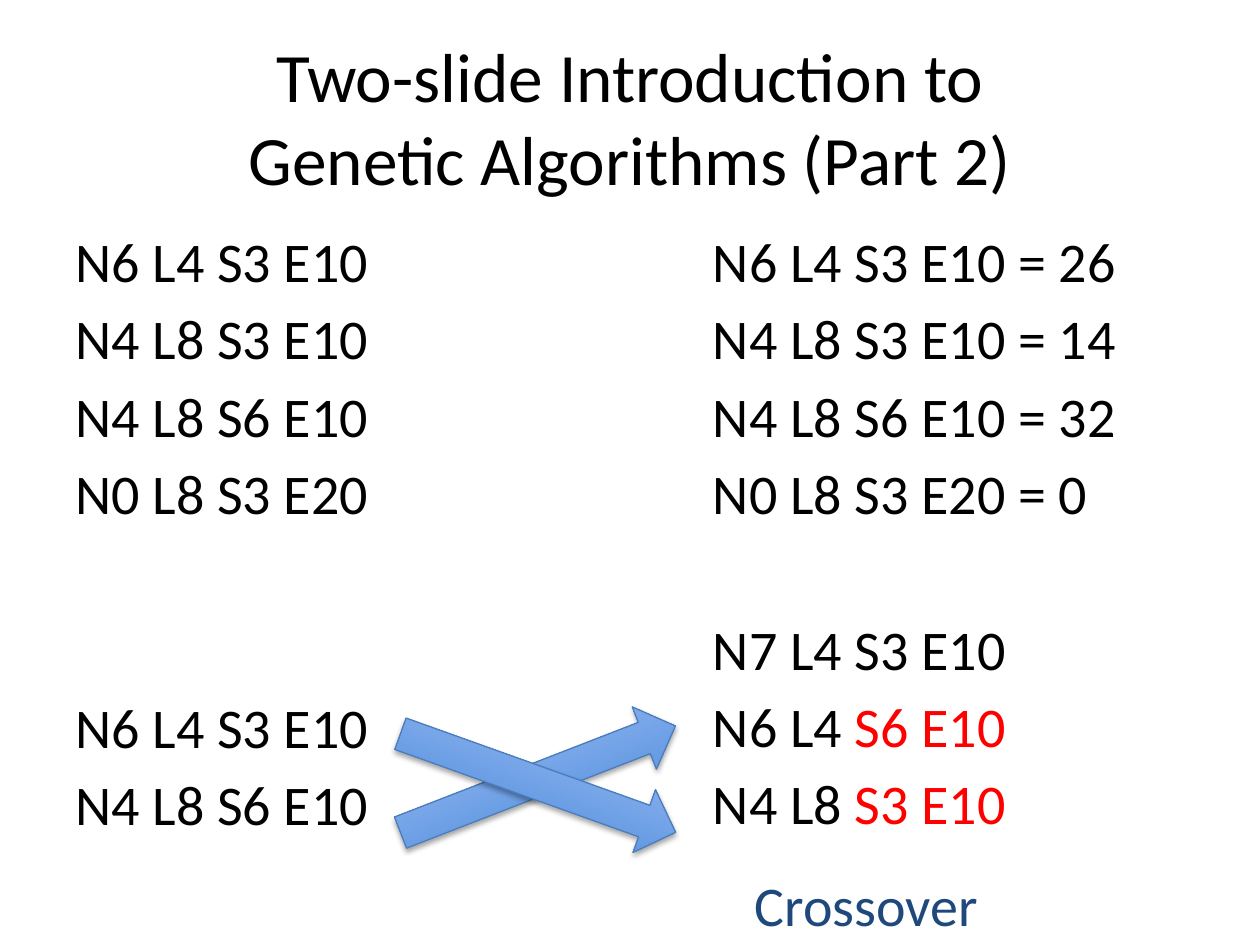
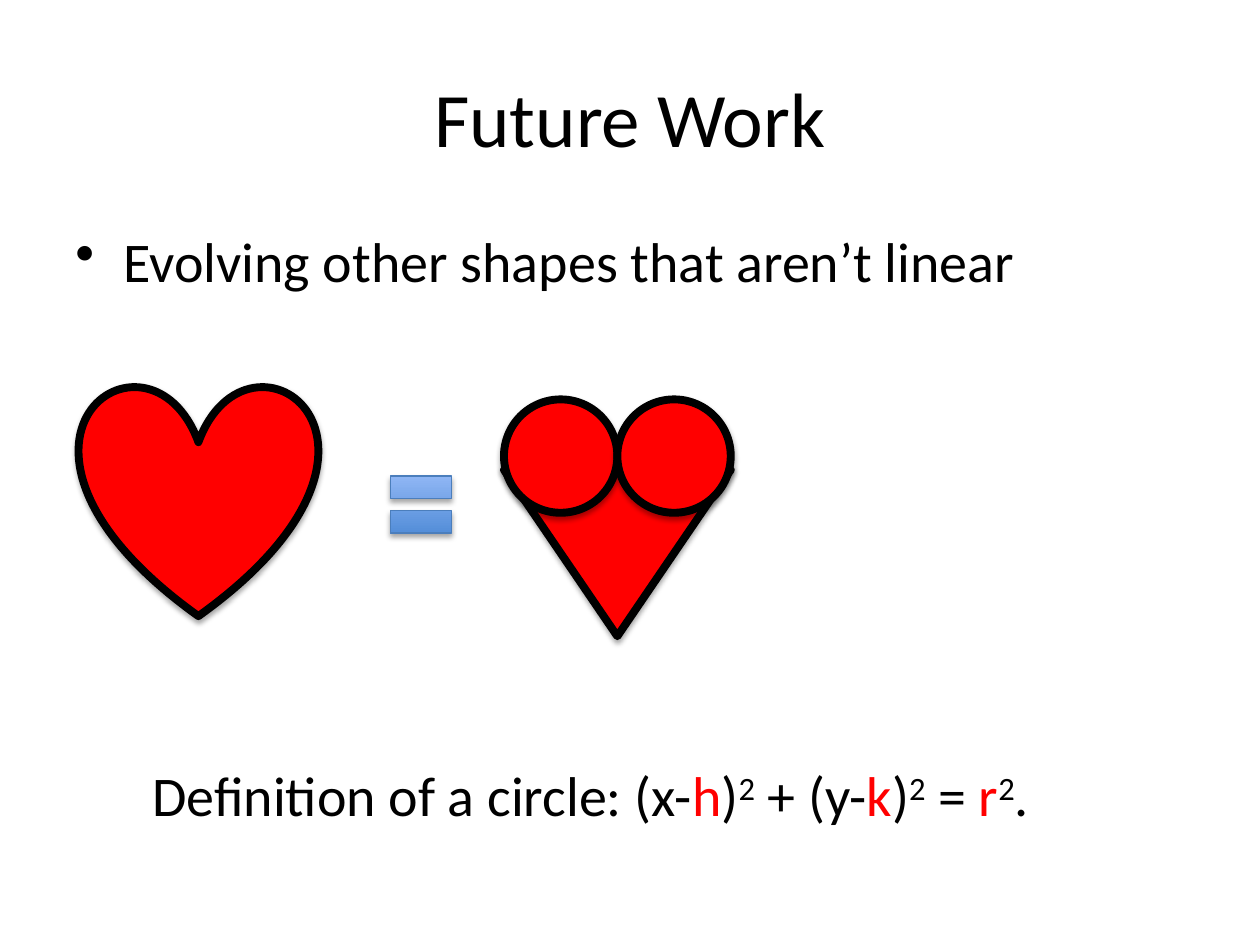
from lxml.etree import SubElement
from pptx import Presentation
from pptx.dml.color import RGBColor
from pptx.enum.shapes import MSO_SHAPE as Shape
from pptx.enum.text import MSO_ANCHOR, MSO_AUTO_SIZE, PP_ALIGN
from pptx.oxml.ns import qn
from pptx.util import Inches, Pt

BLACK = RGBColor(0x00, 0x00, 0x00)
RED = RGBColor(0xFF, 0x00, 0x00)
NAVY = RGBColor(0x1F, 0x49, 0x7D)
BLUE_DARK = RGBColor(0x3F, 0x80, 0xCE)
BLUE_LIGHT = RGBColor(0xA4, 0xC4, 0xFF)
BLUE_LINE = RGBColor(0x4B, 0x7E, 0xBC)

FONT = "Calibri"
BODY_SIZE = 32
ROW_GAP = 5.76
ROW_PITCH = 44.8
TITLE_ONLY = 5


class Deck:
    """Holds the presentation, its style and the slide being filled."""

    def __init__(self):
        self.prs = Presentation()
        self.prs.slide_width, self.prs.slide_height = Inches(10), Inches(7.5)
        self.slide = None

    def add_slide(self, title, size):
        self.slide = self.prs.slides.add_slide(self.prs.slide_layouts[TITLE_ONLY])
        heading = self.slide.shapes.title
        heading.left, heading.top = Inches(0.5), Inches(0.3)
        heading.width, heading.height = Inches(9), Inches(1.25)
        frame = heading.text_frame
        frame.vertical_anchor = MSO_ANCHOR.MIDDLE
        frame.text = title
        frame.paragraphs[0].alignment = PP_ALIGN.CENTER
        self.set_font(frame.paragraphs[0], size, BLACK)

    def set_font(self, paragraph, size, color=None):
        paragraph.font.name = FONT
        paragraph.font.size = Pt(size)
        if color is not None:
            paragraph.font.color.rgb = color

    def text_frame(self, left, top, width, height, wrap=True):
        box = self.slide.shapes.add_textbox(
            Inches(left), Inches(top), Inches(width), Inches(height))
        frame = box.text_frame
        frame.word_wrap = wrap
        if not wrap:
            frame.auto_size = MSO_AUTO_SIZE.SHAPE_TO_FIT_TEXT
        return frame

    def label(self, left, top, width, height, text, color=BLACK, wrap=True):
        paragraph = self.text_frame(left, top, width, height, wrap).paragraphs[0]
        paragraph.text = text
        self.set_font(paragraph, BODY_SIZE, color)
        return paragraph

    def bullet(self, left, top, width, height, text):
        properties = self.label(left, top, width, height, text)._p.get_or_add_pPr()
        properties.set("marL", str(Inches(0.38)))
        properties.set("indent", str(-Inches(0.38)))
        mark = SubElement(properties, qn("a:buChar"), char="•")
        properties.find(qn("a:defRPr")).addprevious(mark)

    def mixed_runs(self, paragraph, runs):
        """Fill a paragraph from (text, colour, is superscript) triples."""
        self.set_font(paragraph, BODY_SIZE)
        for text, color, raised in runs:
            run = paragraph.add_run()
            run.text = text
            run.font.color.rgb = color
            if raised:
                run._r.get_or_add_rPr().set("baseline", "30000")

    def genome_column(self, left, width, groups, skipped_rows):
        """List groups of (kept genes, swapped genes), with free rows between groups."""
        frame = self.text_frame(left, 1.75, width, 5.49)
        paragraph = frame.paragraphs[0]
        for group_index, group in enumerate(groups):
            for row, (kept, swapped) in enumerate(group):
                if group_index or row:
                    paragraph = frame.add_paragraph()
                    skipped = 0 if row else skipped_rows
                    paragraph.space_before = Pt(ROW_GAP + skipped * ROW_PITCH)
                if swapped:
                    self.mixed_runs(paragraph, [(kept, BLACK, False), (swapped, RED, False)])
                else:
                    paragraph.text = kept
                    self.set_font(paragraph, BODY_SIZE, BLACK)

    def shape(self, kind, left, top, width, height):
        shape = self.slide.shapes.add_shape(
            kind, Inches(left), Inches(top), Inches(width), Inches(height))
        shape.shadow.inherit = False
        effects = shape._element.spPr.find(qn("a:effectLst"))
        shadow = SubElement(effects, qn("a:outerShdw"), blurRad=str(Pt(3.1)),
                            dist=str(Pt(1.8)), dir="5400000", rotWithShape="0")
        shade = SubElement(shadow, qn("a:srgbClr"), val=str(BLACK))
        SubElement(shade, qn("a:alpha"), val="35000")
        return shape

    def blue_shape(self, kind, left, top, width, height, rotation=0):
        shape = self.shape(kind, left, top, width, height)
        shape.rotation = rotation
        shape.fill.gradient()
        shape.fill.gradient_angle = 90
        for stop, color in zip(shape.fill.gradient_stops, (BLUE_DARK, BLUE_LIGHT)):
            stop.color.rgb = color
        shape.line.color.rgb = BLUE_LINE
        shape.line.width = Pt(0.75)

    def red_shape(self, kind, left, top, width, height, flipped=False):
        shape = self.shape(kind, left, top, width, height)
        shape.fill.solid()
        shape.fill.fore_color.rgb = RED
        shape.line.color.rgb = BLACK
        shape.line.width = Pt(4.5)
        if flipped:
            shape._element.spPr.find(qn("a:xfrm")).set("flipV", "1")


def add_crossover_slide(deck):
    deck.add_slide("Two-slide Introduction to\vGenetic Algorithms (Part 2)", 39.6)

    scores = {"N6 L4 S3 E10": 26, "N4 L8 S3 E10": 14,
              "N4 L8 S6 E10": 32, "N0 L8 S3 E20": 0}
    parents = [("N6 L4 S3 E10", ""), ("N4 L8 S6 E10", "")]
    children = [("N7 L4 S3 E10", ""), ("N6 L4 ", "S6 E10"), ("N4 L8 ", "S3 E10")]
    population = [(genome, "") for genome in scores]
    scored = [(f"{genome} = {score}", "") for genome, score in scores.items()]
    deck.genome_column(0.5, 2.92, [population, parents], skipped_rows=2)
    deck.genome_column(5.56, 4.1, [scored, children], skipped_rows=1)

    deck.blue_shape(Shape.RIGHT_ARROW, 3.1, 5.92, 2.34, 0.53, rotation=338.8)
    deck.blue_shape(Shape.RIGHT_ARROW, 3.11, 5.95, 2.32, 0.53, rotation=19.7)
    deck.label(5.89, 6.86, 2, 0.64, "Crossover", NAVY, wrap=False)


def add_future_work_slide(deck):
    deck.add_slide("Future Work", 44)
    deck.bullet(0.5, 1.75, 9, 0.66, "Evolving other shapes that aren’t linear")

    deck.red_shape(Shape.HEART, 0.63, 3.05, 1.89, 1.84)
    lobe, heart_left = 0.9, 4
    deck.red_shape(Shape.ISOSCELES_TRIANGLE, heart_left, 3.73, 2 * lobe, 1.32, flipped=True)
    deck.blue_shape(Shape.MATH_EQUAL, 3.01, 3.62, 0.66, 0.77)
    for side in range(2):
        deck.red_shape(Shape.OVAL, heart_left + side * lobe, 3.17, lobe, lobe)

    squared = ("2", BLACK, True)
    definition = deck.text_frame(1.11, 5.99, 7.54, 0.64, wrap=False).paragraphs[0]
    deck.mixed_runs(definition, [
        ("Definition of a circle: (x-", BLACK, False), ("h", RED, False),
        (")", BLACK, False), squared,
        (" + (y-", BLACK, False), ("k", RED, False), (")", BLACK, False), squared,
        (" = ", BLACK, False), ("r", RED, False), squared, (".", BLACK, False)])


def main():
    deck = Deck()
    add_crossover_slide(deck)
    add_future_work_slide(deck)
    deck.prs.save("out.pptx")


if __name__ == "__main__":
    main()
